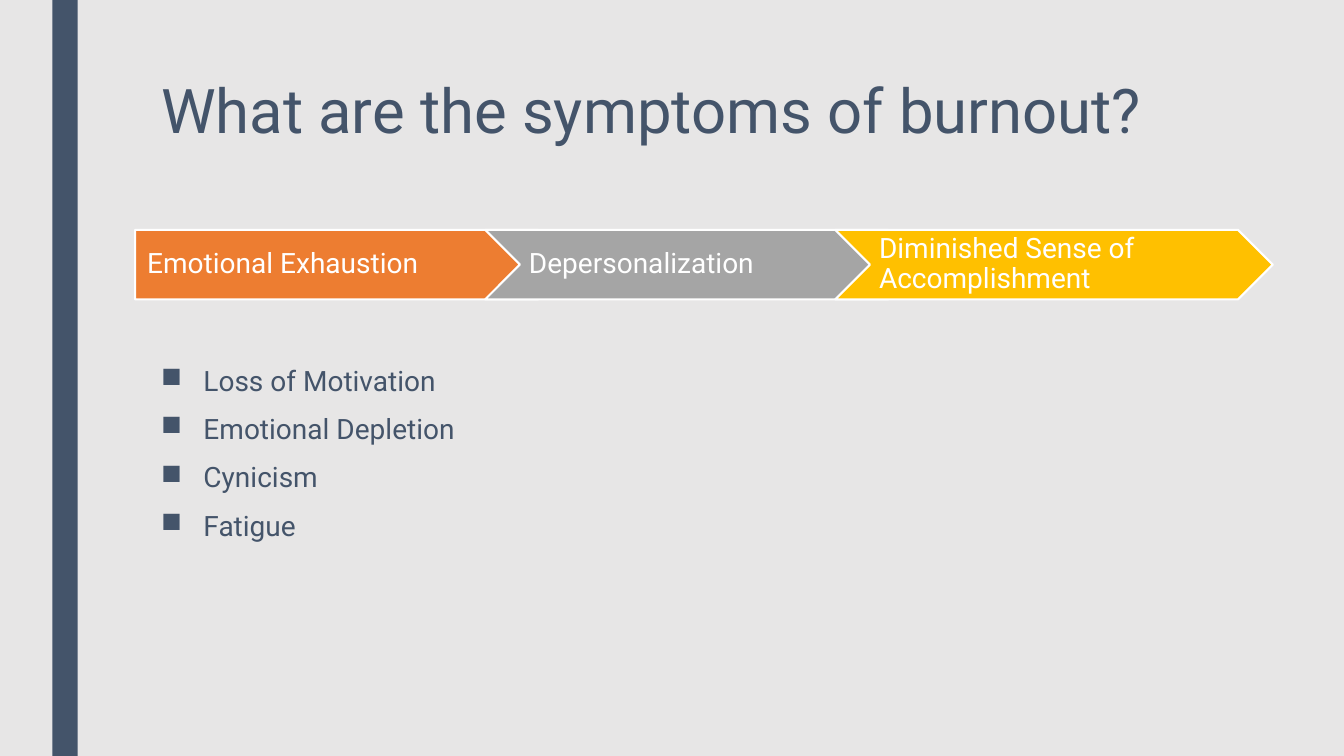
import pptx
import pptx.util
import pptx.dml.color
import pptx.enum.shapes
import pptx.enum.text
import lxml.etree
from pptx.util import Inches, Pt

RGBColor = pptx.dml.color.RGBColor
SHAPE = pptx.enum.shapes.MSO_SHAPE
NAVY = RGBColor(0x44, 0x54, 0x6A)
PALE = RGBColor(0xE7, 0xE6, 0xE6)
WHITE = RGBColor(0xFF, 0xFF, 0xFF)
ORANGE = RGBColor(0xED, 0x7D, 0x31)
GRAY = RGBColor(0xA5, 0xA5, 0xA5)
GOLD = RGBColor(0xFF, 0xC0, 0x00)


def style(para, size, color, lines):
    para.alignment = pptx.enum.text.PP_ALIGN.LEFT
    para.line_spacing = lines
    for run in para.runs:
        run.font.name = "Roboto"
        run.font.size = Pt(size)
        run.font.color.rgb = color


def block(kind, left, top, width, height, fill):
    shape = slide.shapes.add_shape(
        kind, Inches(left), Inches(top), Inches(width), Inches(height))
    shape.shadow.inherit = False
    shape.fill.solid()
    shape.fill.fore_color.rgb = fill
    return shape


deck = pptx.Presentation()
deck.slide_width = Inches(13.33)
deck.slide_height = Inches(7.5)
slide = deck.slides.add_slide(deck.slide_layouts[6])
slide.background.fill.solid()
slide.background.fill.fore_color.rgb = PALE

# Side bar
bar = block(SHAPE.RECTANGLE, 0.52, 0, 0.25, 7.5, NAVY)
bar.line.fill.background()

# Title
title = slide.shapes.add_textbox(
    Inches(1.5), Inches(0.75), Inches(10.5), Inches(1.62))
title.text_frame.word_wrap = True
title.text_frame.text = "What are the symptoms of burnout?"
style(title.text_frame.paragraphs[0], 44, NAVY, 0.89)

# Symptom list
body = slide.shapes.add_textbox(
    Inches(1.5), Inches(3.58), Inches(10.5), Inches(2.63))
body.text_frame.word_wrap = True
body.text_frame.text = "\n".join(
    ["Loss of Motivation", "Emotional Depletion", "Cynicism", "Fatigue"])
for para in body.text_frame.paragraphs:
    style(para, 20, NAVY, 0.94)
    para.space_before = Pt(10)
    para.space_after = Pt(2)
    props = para._p.get_or_add_pPr()
    props.set("marL", str(Inches(0.42)))
    props.set("indent", str(-Inches(0.42)))
    mark = lxml.etree.SubElement(props, pptx.oxml.ns.qn("a:buChar"))
    mark.set("char", "■")

# Arrow chain: each step overlaps the one before by a fifth
wide = 4.34
steps = [
    (SHAPE.PENTAGON, ORANGE, 0.12, "Emotional Exhaustion"),
    (SHAPE.CHEVRON, GRAY, 0.09, "Depersonalization"),
    (SHAPE.CHEVRON, GOLD, 0.09, "Diminished Sense of Accomplishment"),
]
for i, (kind, fill, inset, label) in enumerate(steps):
    step = block(kind, 1.34 + i * wide * 0.8, 2.28, wide, 0.69, fill)
    step.line.color.rgb = WHITE
    step.line.width = Pt(1.5)
    frame = step.text_frame
    frame.word_wrap = True
    frame.vertical_anchor = pptx.enum.text.MSO_ANCHOR.MIDDLE
    frame.margin_left = Inches(inset)
    frame.margin_right = Inches(0.03)
    frame.margin_top = frame.margin_bottom = Inches(0.06)
    frame.text = label
    style(frame.paragraphs[0], 20, WHITE, 0.9)

deck.save("out.pptx")
